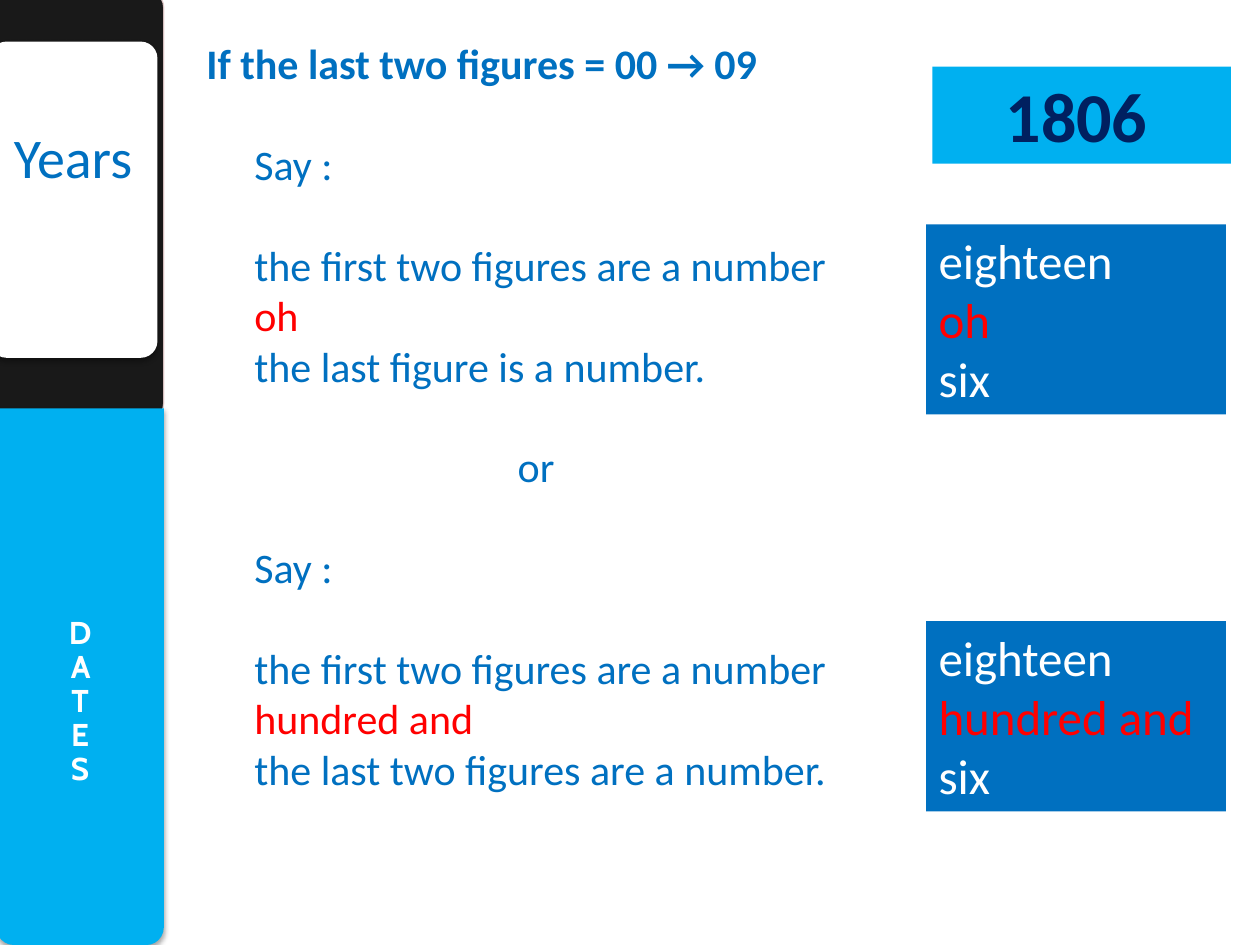
from dataclasses import dataclass

from lxml import etree
from pptx import Presentation
from pptx import util as u
from pptx.dml.color import RGBColor
from pptx.enum import shapes, text
from pptx.oxml import ns


@dataclass(frozen=True)
class Theme:
    font: str = "Calibri"
    tab_font: str = "Cabin"
    black: str = "000000"
    white: str = "FFFFFF"
    edge: str = "E8D0D0"
    sky: str = "00B0F0"
    blue: str = "0070C0"
    navy: str = "002060"
    red: str = "FF0000"
    tab: int = 18
    body: int = 24
    answer: int = 28
    title: int = 32
    year: int = 40
    gap: float = 28.8  # one body line, in points


T = Theme()
SHAPE = shapes.MSO_SHAPE
LEFT, CENTER = text.PP_ALIGN.LEFT, text.PP_ALIGN.CENTER
ANSWER_LEFT, ANSWER_WIDTH = 7.35, 2.38


def box(left, top, width, height):
    return [u.Inches(v) for v in (left, top, width, height)]


def set_alpha(color_parent, percent):
    """Make the solid colour below an element partly transparent."""
    color = color_parent.find(".//" + ns.qn("a:srgbClr"))
    etree.SubElement(color, ns.qn("a:alpha"), val=str(percent * 1000))


def add_soft_shadow(shape):
    effects = shape._element.spPr.find(ns.qn("a:effectLst"))
    shadow = etree.SubElement(
        effects, ns.qn("a:outerShdw"), blurRad=str(u.Pt(3.1)),
        dist=str(u.Pt(1.8)), dir="5400000", rotWithShape="0")
    etree.SubElement(shadow, ns.qn("a:srgbClr"), val=T.black)
    set_alpha(shadow, 35)


def add_panel(slide, kind, place, fill, corner=None, soft=False):
    panel = slide.shapes.add_shape(kind, *box(*place))
    panel.shadow.inherit = False
    panel.fill.solid()
    panel.fill.fore_color.rgb = RGBColor.from_string(fill)
    panel.line.fill.background()
    if corner is not None:
        panel.adjustments[0] = corner
    if soft:
        add_soft_shadow(panel)
    return panel


def write(frame, words, size, color, first=False, font=T.font, bold=False,
          align=LEFT, indent=0, before=0, spacing=None):
    """Write one formatted paragraph, into the empty one if it is the first."""
    line = frame.paragraphs[0] if first else frame.add_paragraph()
    line.alignment = align
    line.space_before = u.Pt(before)
    if spacing:
        line.line_spacing = spacing
    if indent:
        line._p.get_or_add_pPr().set("marL", str(u.Inches(indent)))
    run = line.add_run()
    run.text = words
    run.font.name, run.font.size, run.font.bold = font, u.Pt(size), bold
    run.font.color.rgb = RGBColor.from_string(color)


def prepare(frame, anchor=text.MSO_ANCHOR.TOP):
    frame.word_wrap = True
    frame.auto_size = text.MSO_AUTO_SIZE.NONE
    frame.vertical_anchor = anchor
    return frame


def add_sidebar(slide):
    # Dark backing, white title card, blue tab
    backing = add_panel(slide, SHAPE.ROUNDED_RECTANGLE,
                        (-0.12, -0.08, 1.42, 3.42), T.black, 0.1)
    set_alpha(backing._element.spPr.find(ns.qn("a:solidFill")), 90)
    backing.line.color.rgb = RGBColor.from_string(T.edge)
    backing.line.width = u.Pt(0.75)
    set_alpha(backing.line._ln, 90)
    add_panel(slide, SHAPE.ROUNDED_RECTANGLE, (-0.08, 0.33, 1.33, 2.51),
              T.white, 0.1, soft=True)
    tab = add_panel(slide, SHAPE.ROUND_2_SAME_RECTANGLE,
                    (-0.03, 3.24, 1.33, 4.26), T.sky, 0.105, soft=True)
    tab.rotation = 180

    # Stacked letters on the tab
    label = slide.shapes.add_textbox(*box(0.01, 3.24, 1.25, 4.22))
    frame = prepare(label.text_frame, text.MSO_ANCHOR.MIDDLE)
    frame.margin_left = frame.margin_right = u.Inches(0.08)
    frame.margin_top, frame.margin_bottom = u.Inches(0.54), u.Inches(0.09)
    frame._txBody.bodyPr.set("vert", "wordArtVert")
    write(frame, "DATES", T.tab, T.white, first=True, font=T.tab_font,
          bold=True, align=CENTER, spacing=0.9)


def place_title(slide, words):
    title = slide.shapes.title
    title.left, title.top, title.width, title.height = box(-0.03, 0.92, 1.22, 0.64)
    frame = prepare(title.text_frame)
    write(frame, words, T.title, T.blue, first=True, align=CENTER, spacing=1.0)
    # Bring the title in front of its card
    title._element.getparent().append(title._element)


def add_rule(slide):
    rule = slide.shapes.add_textbox(*box(1.54, 0.25, 5.43, 6.56))
    frame = prepare(rule.text_frame)
    write(frame, "If the last two figures = 00 → 09", T.body, T.blue,
          first=True, bold=True)

    def add_reading(middle, last):
        steps = [("Say :", T.blue, T.gap),
                 ("the first two figures are a number", T.blue, T.gap),
                 (middle, T.red, 0),
                 (last, T.blue, 0)]
        for words, color, before in steps:
            write(frame, words, T.body, color, indent=0.38, before=before)

    add_reading("oh", "the last figure is a number.")
    write(frame, "or", T.body, T.blue, align=CENTER, before=T.gap)
    add_reading("hundred and", "the last two figures are a number.")


def add_year(slide, year):
    plate = add_panel(slide, SHAPE.RECTANGLE, (7.4, 0.53, 2.37, 0.77), T.sky)
    frame = prepare(plate.text_frame)
    frame.margin_right = u.Inches(0.18)
    write(frame, year, T.year, T.navy, first=True, bold=True, align=CENTER)


def add_answer(slide, top, middle):
    answer = add_panel(slide, SHAPE.RECTANGLE,
                       (ANSWER_LEFT, top, ANSWER_WIDTH, 1.51), T.blue)
    frame = prepare(answer.text_frame)
    write(frame, "eighteen", T.answer, T.white, first=True)
    write(frame, middle, T.answer, T.red)
    write(frame, "six", T.answer, T.white)


def main():
    deck = Presentation()
    deck.slide_width, deck.slide_height = u.Inches(10), u.Inches(7.5)
    slide = deck.slides.add_slide(deck.slide_layouts.get_by_name("Title Only"))
    add_sidebar(slide)
    place_title(slide, "Years")
    add_rule(slide)
    add_year(slide, "1806")
    for top, middle in ((1.78, "oh"), (4.93, "hundred and")):
        add_answer(slide, top, middle)
    deck.save("out.pptx")


if __name__ == "__main__":
    main()
